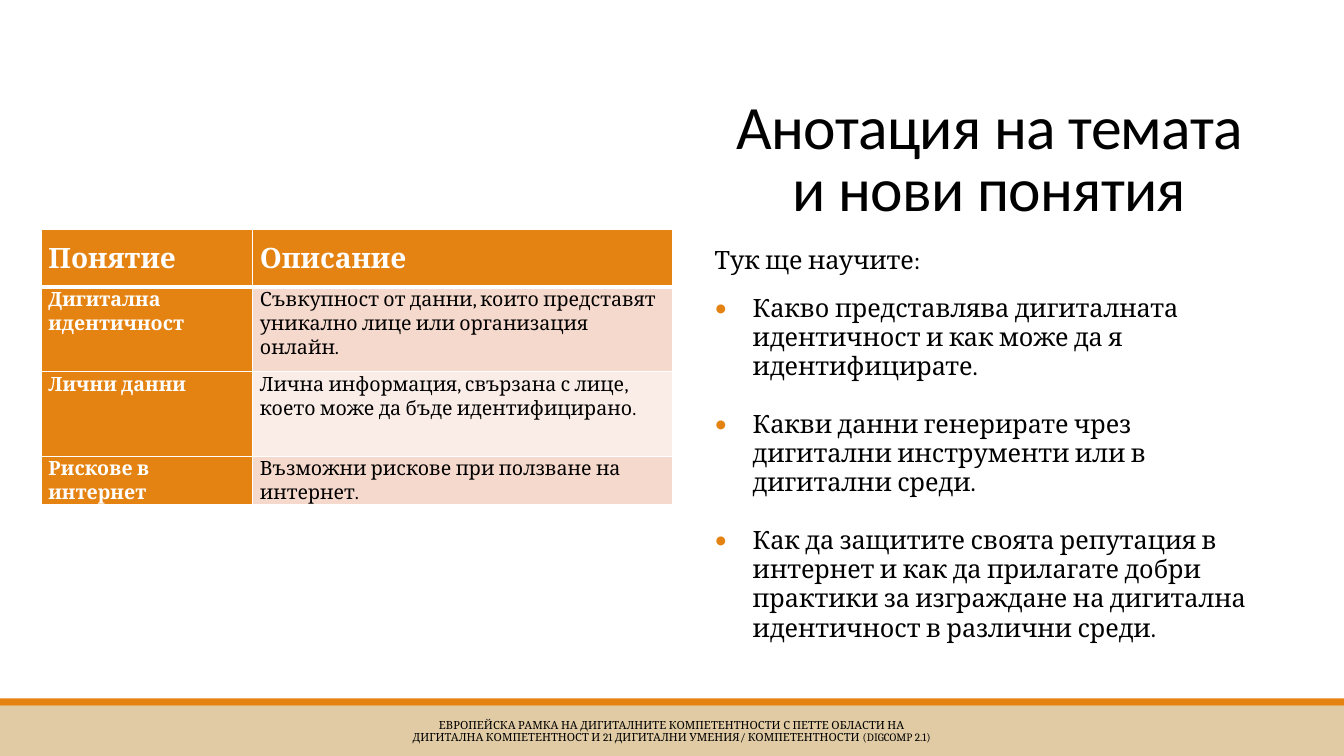
from pptx import Presentation
from pptx import util as u
from pptx.dml.color import RGBColor
from pptx.enum import shapes, text
from pptx.oxml import parse_xml
from pptx.oxml.ns import nsdecls

ORANGE = RGBColor(0xE4, 0x83, 0x12)
SAND = RGBColor(0xE0, 0xCB, 0xA4)
ROSE = RGBColor(0xF5, 0xD9, 0xCC)
PALE = RGBColor(0xFA, 0xED, 0xE7)
WHITE = RGBColor(0xFF, 0xFF, 0xFF)
BLACK = RGBColor(0, 0, 0)

TITLE = "Анотация на темата и нови понятия"
INTRO = "Тук ще научите:"
GOALS = [
    "Какво представлява дигиталната идентичност и как може да я идентифицирате.",
    "Какви данни генерирате чрез дигитални инструменти или в дигитални среди.",
    "Как да защитите своята репутация в интернет и как да прилагате добри "
    "практики за изграждане на дигитална идентичност в различни среди.",
]
TERMS = [
    ("Понятие", "Описание"),
    ("Дигитална идентичност",
     "Съвкупност от данни, които представят уникално лице или организация онлайн."),
    ("Лични данни",
     "Лична информация, свързана с лице, което може да бъде идентифицирано."),
    ("Рискове в интернет", "Възможни рискове при ползване на интернет."),
]
FOOTER = ("ЕВРОПЕЙСКА РАМКА НА ДИГИТАЛНИТЕ КОМПЕТЕНТНОСТИ С ПЕТТЕ ОБЛАСТИ НА "
          "ДИГИТАЛНА КОМПЕТЕНТНОСТ И 21 ДИГИТАЛНИ УМЕНИЯ/ КОМПЕТЕНТНОСТИ (DIGCOMP 2.1)")


def set_attrs(obj, values):
    for name, value in values.items():
        setattr(obj, name, value)


def write(p, words, size, color=BLACK, name="Cambria", bold=False, **para):
    set_attrs(p, para)
    r = p.add_run()
    r.text = words
    set_attrs(r.font, dict(size=u.Pt(size), name=name, bold=bold))
    r.font.color.rgb = color
    return r


def set_frame(tf, inset_x, inset_y, anchor):
    set_attrs(tf, dict(word_wrap=True, auto_size=text.MSO_AUTO_SIZE.NONE,
                       vertical_anchor=anchor,
                       margin_left=inset_x, margin_right=inset_x,
                       margin_top=inset_y, margin_bottom=inset_y))


def add_bullet(p):
    pPr = p._p.get_or_add_pPr()
    pPr.set("marL", str(u.Cm(0.96)))
    pPr.set("indent", str(-u.Cm(0.96)))
    for xml in (f'<a:buClr {nsdecls("a")}><a:srgbClr val="{ORANGE}"/></a:buClr>',
                f'<a:buFont {nsdecls("a")} typeface="Calibri"/>',
                f'<a:buChar {nsdecls("a")} char="•"/>'):
        pPr.append(parse_xml(xml))


def set_borders(cell, bottom):
    tcPr = cell._tc.get_or_add_tcPr()
    for side, width in dict(L=1, R=1, T=1, B=bottom).items():
        tcPr.append(parse_xml(
            f'<a:ln{side} {nsdecls("a")} w="{u.Pt(width)}"><a:solidFill>'
            f'<a:srgbClr val="{WHITE}"/></a:solidFill></a:ln{side}>'))


def add_title(s, left, top, width, height):
    sp = s.shapes.title
    set_attrs(sp, dict(left=left, top=top, width=width, height=height))
    set_frame(sp.text_frame, u.Cm(0.25), u.Cm(0.13), text.MSO_ANCHOR.BOTTOM)
    r = write(sp.text_frame.paragraphs[0], TITLE, 44, name="Calibri",
              alignment=text.PP_ALIGN.CENTER, line_spacing=0.85)
    r.font._element.set("spc", "-50")


def add_goals(s, left, top, width, height):
    tf = s.shapes.add_textbox(left, top, width, height).text_frame
    set_frame(tf, u.Cm(0.2), u.Cm(0.2), text.MSO_ANCHOR.TOP)
    write(tf.paragraphs[0], INTRO, 18, line_spacing=0.8, space_after=u.Pt(2))
    for goal in GOALS:
        p = tf.add_paragraph()
        add_bullet(p)
        write(p, goal, 18, line_spacing=0.97,
              space_before=u.Pt(12), space_after=u.Pt(8))


def add_terms(s, left, top, col_widths, row_heights):
    table = s.shapes.add_table(len(TERMS), 2, left, top,
                               sum(col_widths), sum(row_heights)).table
    for col, width in zip(table.columns, col_widths):
        col.width = width
    for i, (row, height) in enumerate(zip(table.rows, row_heights)):
        row.height = height
        header = i == 0
        for j, cell in enumerate(row.cells):
            label = header or j == 0
            set_attrs(cell, dict(
                margin_left=u.Cm(0.18), margin_right=u.Cm(0.18),
                margin_top=0, margin_bottom=0,
                vertical_anchor=text.MSO_ANCHOR.MIDDLE if header
                else text.MSO_ANCHOR.TOP))
            # The rule under the header is thicker
            set_borders(cell, 3 if header else 1)
            cell.fill.solid()
            cell.fill.fore_color.rgb = ORANGE if label else (PALE, ROSE)[i % 2]
            write(cell.text_frame.paragraphs[0], TERMS[i][j],
                  20 if header else 14, WHITE if label else BLACK, bold=label,
                  line_spacing=1.07, space_after=u.Pt(8))


def add_footer(s, left, top, width, height):
    # Sand bar with an orange strip along its top
    strip = u.Cm(0.18)
    for y, h, color in ((top, height, SAND), (top - strip, strip, ORANGE)):
        sp = s.shapes.add_shape(shapes.MSO_SHAPE.RECTANGLE, left, y, width, h)
        sp.shadow.inherit = False
        sp.fill.solid()
        sp.fill.fore_color.rgb = color
        sp.line.fill.background()
    # Centred caption
    text_w, text_h = u.Cm(13.39), u.Cm(1.02)
    tf = s.shapes.add_textbox(left + (width - text_w) // 2, top + u.Cm(0.15),
                              text_w, text_h).text_frame
    set_frame(tf, u.Cm(0.1), u.Cm(0.1), text.MSO_ANCHOR.MIDDLE)
    write(tf.paragraphs[0], FOOTER, 8, alignment=text.PP_ALIGN.CENTER,
          line_spacing=0.9, space_after=u.Pt(6))


def main():
    prs = Presentation()
    prs.slide_width, prs.slide_height = u.Cm(33.87), u.Cm(19.05)
    s = prs.slides.add_slide(prs.slide_layouts[5])
    bar = u.Cm(1.27)
    add_footer(s, 0, prs.slide_height - bar, prs.slide_width, bar)
    # Right column
    left, width = u.Cm(17.81), u.Cm(14.25)
    add_title(s, left, u.Cm(1.75), width, u.Cm(4.04))
    add_goals(s, left, u.Cm(6.1), width, u.Cm(10.19))
    # Left column
    add_terms(s, u.Cm(1.04), u.Cm(5.77), [u.Cm(5.33), u.Cm(10.57)],
              [u.Cm(h) for h in (1.47, 2.13, 2.13, 1.04)])
    prs.save("out.pptx")


if __name__ == "__main__":
    main()
